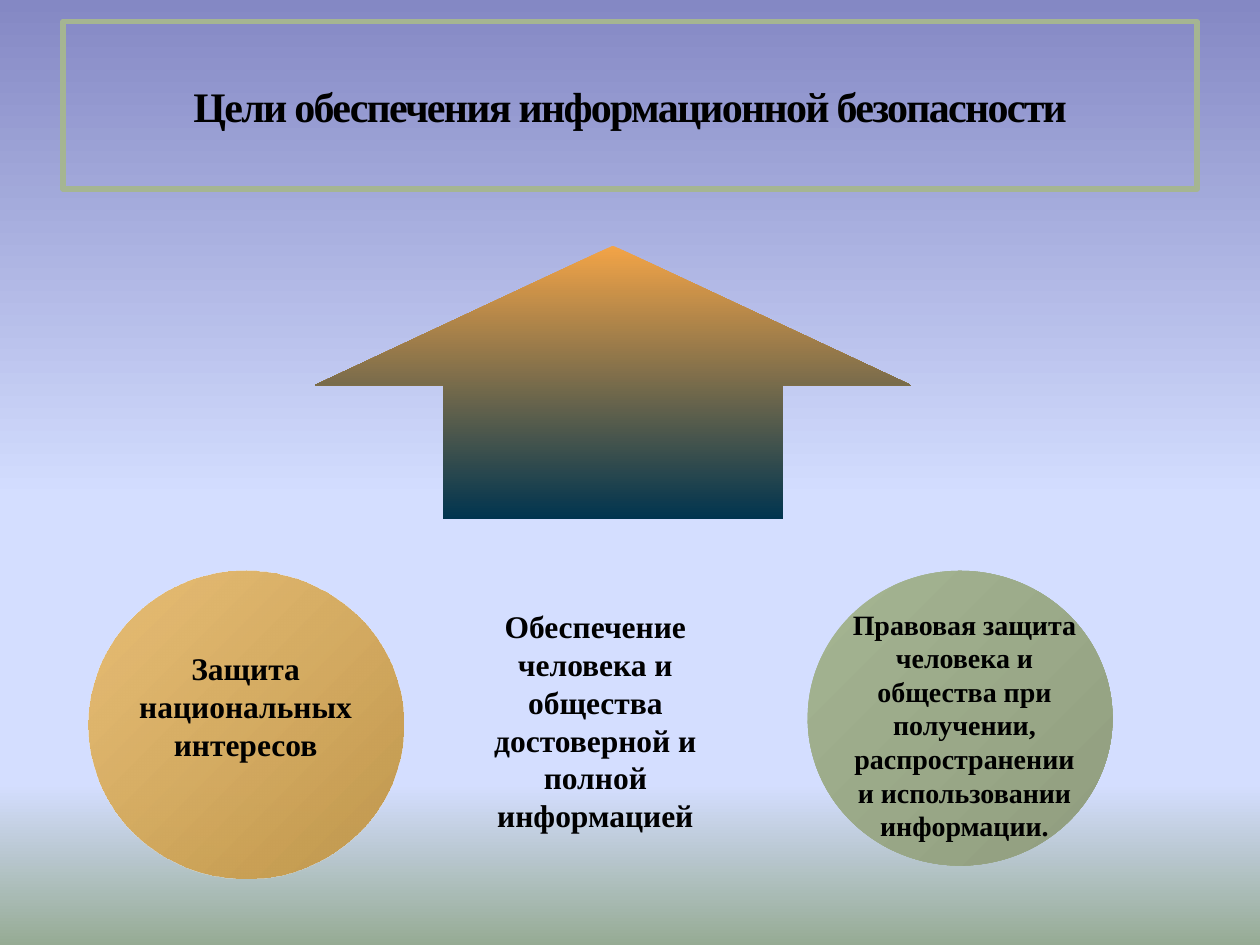
from dataclasses import dataclass

from lxml import etree
from pptx import Presentation
from pptx.dml.color import RGBColor
from pptx.enum import shapes, text
from pptx.oxml import parse_xml
from pptx.oxml.ns import nsdecls, qn
from pptx.util import Inches, Pt

FONT = "Times New Roman"
BLACK = "000000"


@dataclass
class Stop:
    percent: int
    color: str
    alpha: int = 100


@dataclass
class Box:
    left: float
    top: float
    width: float
    height: float

    def lengths(self) -> list:
        return [Inches(v) for v in (self.left, self.top, self.width, self.height)]


@dataclass
class Figure:
    preset: shapes.MSO_SHAPE
    box: Box
    stops: list[Stop]
    angle: int
    adjustments: tuple = ()


@dataclass
class Caption:
    box: Box
    wording: str
    size: int


def rgb(color: str) -> RGBColor:
    return RGBColor.from_string(color)


def set_gradient(fill, stops: list[Stop], angle: int) -> None:
    """Fill with any number of stops; the angle runs clockwise."""
    fill.gradient()
    grad = fill._fill._gradFill
    marks = "".join(
        f'<a:gs pos="{s.percent * 1000}"><a:srgbClr val="{s.color}">'
        f'<a:alpha val="{s.alpha * 1000}"/></a:srgbClr></a:gs>'
        for s in stops
    )
    for child in list(grad):
        grad.remove(child)
    grad.append(parse_xml(f'<a:gsLst {nsdecls("a")}>{marks}</a:gsLst>'))
    grad.append(parse_xml(f'<a:lin {nsdecls("a")} ang="{angle * 60000}" scaled="0"/>'))


def write(frame, wording: str, size: int) -> None:
    frame.text = wording
    for paragraph in frame.paragraphs:
        paragraph.alignment = text.PP_ALIGN.CENTER
        for run in paragraph.runs:
            run.font.name = FONT
            run.font.size = Pt(size)
            run.font.bold = True
            run.font.color.rgb = rgb(BLACK)


def add_figure(slide, figure: Figure):
    shape = slide.shapes.add_shape(figure.preset, *figure.box.lengths())
    shape.shadow.inherit = False
    shape.line.fill.background()
    for index, value in enumerate(figure.adjustments):
        shape.adjustments[index] = value
    set_gradient(shape.fill, figure.stops, figure.angle)
    return shape


def add_caption(slide, caption: Caption) -> None:
    frame = slide.shapes.add_textbox(*caption.box.lengths()).text_frame
    frame.word_wrap = True
    frame.auto_size = text.MSO_AUTO_SIZE.SHAPE_TO_FIT_TEXT
    write(frame, caption.wording, caption.size)


def format_title(title, box: Box) -> None:
    title.left, title.top, title.width, title.height = box.lengths()
    title.line.color.rgb = rgb("A5B592")
    title.line.width = Pt(3)
    etree.SubElement(title.line._get_or_add_ln(), qn("a:round"))
    frame = title.text_frame
    frame.word_wrap = False
    frame.auto_size = text.MSO_AUTO_SIZE.NONE
    frame.vertical_anchor = text.MSO_ANCHOR.MIDDLE
    write(frame, "Цели обеспечения информационной безопасности", 24)
    frame.paragraphs[0].runs[0].font._element.set("spc", "-100")


def main() -> None:
    prs = Presentation()
    prs.slide_width, prs.slide_height = Inches(10), Inches(7.5)
    slide = prs.slides.add_slide(prs.slide_layouts[5])
    sky = [Stop(0, "8488C4"), Stop(53, "D4DEFF"), Stop(83, "D4DEFF"), Stop(100, "96AB94")]
    set_gradient(slide.background.fill, sky, 90)
    format_title(slide.shapes.title, Box(0.5, 0.17, 9, 1.33))

    preset = shapes.MSO_SHAPE
    add_figure(slide, Figure(preset.UP_ARROW, Box(2.5, 1.95, 4.73, 2.17),
                             [Stop(0, "F3A447"), Stop(100, "00344F")], 90, (0.57, 0.51)))

    interests = add_figure(slide, Figure(preset.OVAL, Box(0.7, 4.53, 2.5, 2.44),
                                         [Stop(0, "EAB85E", 85), Stop(100, "C0974D")], 45))
    frame = interests.text_frame
    frame.word_wrap = False
    frame.vertical_anchor = text.MSO_ANCHOR.MIDDLE
    frame.margin_bottom = Inches(0.34)
    write(frame, "Защита\nнациональных\nинтересов", 18)

    add_caption(slide, Caption(
        Box(3.67, 4.77, 2.11, 2.22),
        "Обеспечение человека и общества достоверной и полной информацией", 18))

    add_figure(slide, Figure(preset.OVAL, Box(6.41, 4.53, 2.42, 2.34),
                             [Stop(0, "A5B592"), Stop(100, "909D7F")], 45))
    add_caption(slide, Caption(
        Box(6.64, 4.77, 2.03, 2.29),
        "Правовая защита человека и общества при получении, "
        "распространении и использовании информации.", 16))
    prs.save("out.pptx")


if __name__ == "__main__":
    main()
